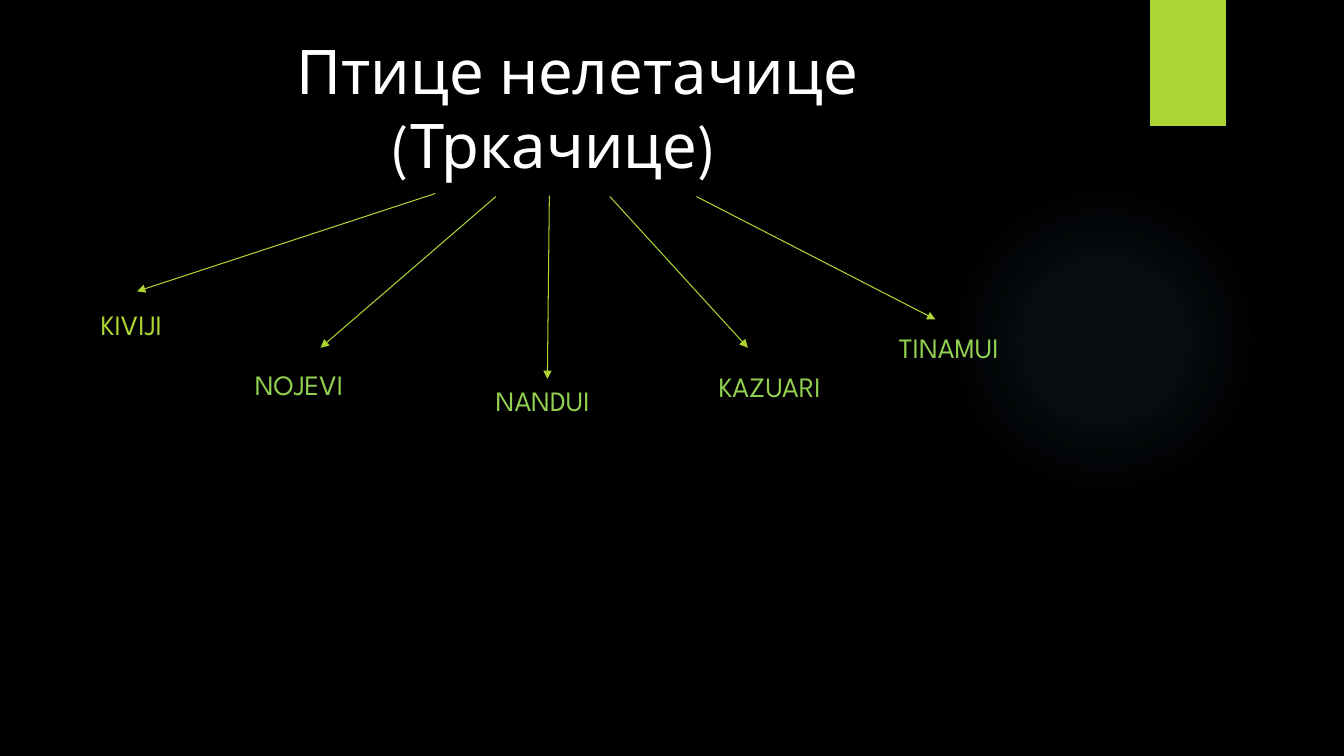
from dataclasses import dataclass

from lxml.etree import SubElement
from pptx import Presentation
from pptx.dml.color import RGBColor
from pptx.enum.shapes import MSO_CONNECTOR as Line, MSO_SHAPE as Form
from pptx.enum.text import MSO_ANCHOR as Anchor
from pptx.oxml import parse_xml
from pptx.oxml.ns import nsdecls, qn
from pptx.util import Pt

LIME = "ACD433"
GREEN = "92D050"
WHITE = "FFFFFF"
GLOW = "7AC4F0"
FONT = "League Spartan"


@dataclass
class Bird:
    name: str
    box: tuple[float, float, float, float]
    start: tuple[float, float]
    end: tuple[float, float]
    color: str = GREEN
    anchor: Anchor = Anchor.TOP
    wrap: bool = True


BIRDS = [
    Bird("KIVIJI", (64.8, 216, 66.2, 31), (311, 138.2), (97.9, 208.1), color=LIME),
    Bird("NOJEVI", (175, 260.6, 88.6, 29.5), (354.2, 140.4), (229, 248.4), anchor=Anchor.BOTTOM),
    Bird("NANDUI", (347, 270.7, 92.2, 31.7), (392.4, 139.7), (391, 270.7)),
    Bird("KAZUARI", (506.2, 260.6, 95.8, 31.7), (435.6, 140.4), (534.2, 248.4)),
    Bird("TINAMUI", (635, 232.6, 93.6, 31.7), (497.5, 140.4), (668.2, 228.2), wrap=False),
]


def paint(code: str) -> RGBColor:
    return RGBColor.from_string(code)


def add_text(slide, text: str, box: tuple, *, size: float = 20, color: str = GREEN,
             anchor: Anchor = Anchor.TOP, wrap: bool = True, indent: float = 0) -> None:
    frame = slide.shapes.add_textbox(*map(Pt, box)).text_frame
    frame.word_wrap = wrap
    frame.vertical_anchor = anchor
    frame.text = text
    for row, para in enumerate(frame.paragraphs):
        if row and indent:
            para._p.get_or_add_pPr().set("marL", str(Pt(indent)))
        para.font.name = FONT
        para.font.size = Pt(size)
        para.font.color.rgb = paint(color)


def add_form(slide, kind: Form, box: tuple, color: str):
    form = slide.shapes.add_shape(kind, *map(Pt, box))
    form.shadow.inherit = False
    form.fill.solid()
    form.fill.fore_color.rgb = paint(color)
    form.line.fill.background()
    return form


def add_glow(slide, box: tuple, color: str, stops: list[tuple[int, int]]) -> None:
    form = add_form(slide, Form.OVAL, box, color)
    steps = "".join(
        f'<a:gs pos="{pos * 1000}"><a:srgbClr val="{color}">'
        f'<a:alpha val="{alpha * 1000}"/></a:srgbClr></a:gs>'
        for pos, alpha in stops
    )
    fade = parse_xml(
        f'<a:gradFill {nsdecls("a")}><a:gsLst>{steps}</a:gsLst><a:path path="circle">'
        '<a:fillToRect l="50000" t="50000" r="50000" b="50000"/></a:path></a:gradFill>'
    )
    props = form._element.spPr
    props.replace(props.find(qn("a:solidFill")), fade)


def add_arrow(slide, start: tuple, end: tuple, color: str) -> None:
    arrow = slide.shapes.add_connector(Line.STRAIGHT, *map(Pt, start + end))
    arrow.line.width = Pt(0.75)
    arrow.line.color.rgb = paint(color)
    SubElement(arrow.line._get_or_add_ln(), qn("a:tailEnd"), type="triangle")
    SubElement(arrow._element.spPr, qn("a:effectLst"))


def main() -> None:
    deck = Presentation()
    deck.slide_width, deck.slide_height = Pt(960), Pt(540)
    slide = deck.slides.add_slide(deck.slide_layouts[6])
    back = slide.background.fill
    back.solid()
    back.fore_color.rgb = paint("000000")

    add_glow(slide, (677.5, 131.8, 221.8, 221.8), GLOW, [(0, 7), (36, 6), (69, 0), (100, 0)])
    add_form(slide, Form.RECTANGLE, (821.6, 0, 54, 90), LIME)
    for bird in BIRDS:
        add_arrow(slide, bird.start, bird.end, LIME)
        add_text(slide, bird.name, bird.box, color=bird.color, anchor=bird.anchor, wrap=bird.wrap)
    add_text(slide, "Птице нелетачице\n(Тркачице)", (204.5, 20.2, 421.2, 113.8),
             size=44, color=WHITE, indent=68)
    deck.save("out.pptx")


if __name__ == "__main__":
    main()
